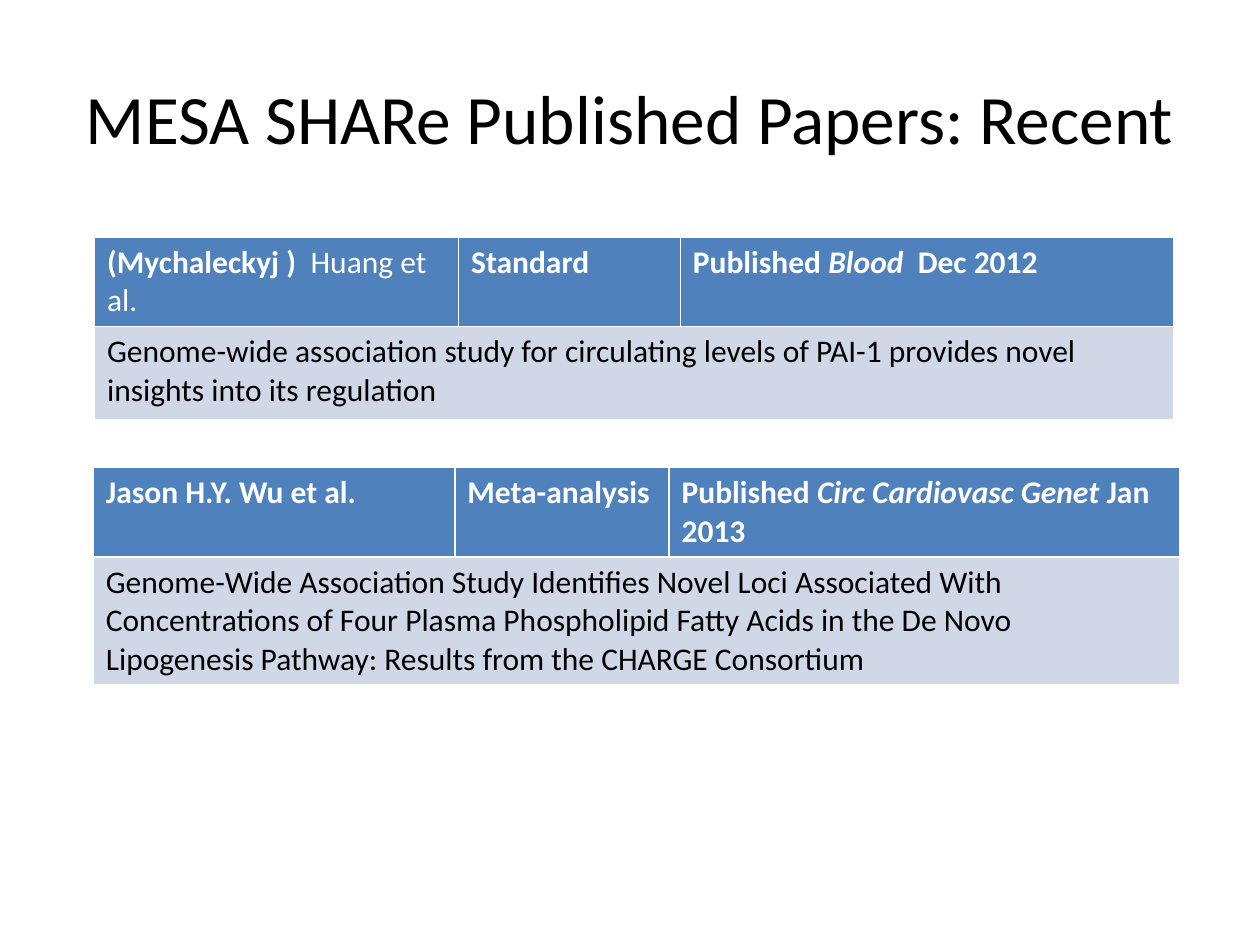
import pptx
import pptx.util
import pptx.dml.color
import pptx.enum.text

COLORS = {"ink": "000000", "white": "FFFFFF", "header": "4F81BD", "body": "D0D8E8"}
FONT = "Calibri"
Inches, Pt = pptx.util.Inches, pptx.util.Pt


def color(name):
    return pptx.dml.color.RGBColor.from_string(COLORS[name])


def fill_cell(cell, spans, fill, ink):
    """Write (text, bold, italic) spans into a filled cell."""
    cell.fill.solid()
    cell.fill.fore_color.rgb = color(fill)
    para = cell.text_frame.paragraphs[0]
    para.font.name, para.font.size = FONT, Pt(18)
    para.font.color.rgb = color(ink)
    for text, bold, italic in spans:
        span = para.add_run()
        span.text = text
        span.font.bold, span.font.italic = bold, italic
    return para


deck = pptx.Presentation()
deck.slide_width, deck.slide_height = Inches(10), Inches(7.5)
page = deck.slides.add_slide(deck.slide_layouts.get_by_name("Title Only"))

# Title: one twentieth of the slide as side margins
title = page.shapes.title
title.left, title.width = int(deck.slide_width * 0.05), int(deck.slide_width * 0.9)
title.top, title.height = int(deck.slide_height * 0.04), Inches(1.25)
frame = title.text_frame
frame.text = "MESA SHARe Published Papers: Recent"
frame.auto_size = pptx.enum.text.MSO_AUTO_SIZE.NONE
frame.vertical_anchor = pptx.enum.text.MSO_ANCHOR.MIDDLE
heading = frame.paragraphs[0]
heading.alignment = pptx.enum.text.PP_ALIGN.CENTER
heading.font.name, heading.font.size = FONT, Pt(39.6)
heading.font.color.rgb = color("ink")

# Papers: place, column widths, row heights, header cells, paper title
papers = [
    (0.75, 1.88, [2.89, 1.76, 3.92], [0.7, 0.74],
     [[("(Mychaleckyj )  ", True, False), ("Huang et al.", False, False)],
      [("Standard", True, False)],
      [("Published ", True, False), ("Blood  ", True, True), ("Dec 2012", True, False)]],
     "Genome-wide association study for circulating levels of PAI-1 provides "
     "novel insights into its regulation"),
    (0.74, 3.71, [2.87, 1.7, 4.05], [0.7, 1],
     [[("Jason H.Y. Wu et al.", True, False)],
      [("Meta-analysis", True, False)],
      [("Published ", True, False), ("Circ Cardiovasc Genet ", True, True),
       ("Jan 2013", True, False)]],
     "Genome-Wide Association Study Identifies Novel Loci Associated With "
     "Concentrations of Four Plasma Phospholipid Fatty Acids in the De Novo "
     "Lipogenesis Pathway: Results from the CHARGE Consortium"),
]

# One table per paper; the default table style draws the white rules
for left, top, widths, heights, headers, paper_title in papers:
    table = page.shapes.add_table(
        len(heights), len(widths), Inches(left), Inches(top),
        Inches(sum(widths)), Inches(sum(heights))).table
    for column, width in zip(table.columns, widths):
        column.width = Inches(width)
    for row, height in zip(table.rows, heights):
        row.height = Inches(height)
    for cell, spans in zip(table.rows[0].cells, headers):
        para = fill_cell(cell, spans, "header", "white")
    para.space_after = Pt(6)
    table.cell(1, 0).merge(table.cell(1, len(widths) - 1))
    fill_cell(table.cell(1, 0), [(paper_title, False, False)], "body", "ink")

deck.save("out.pptx")
